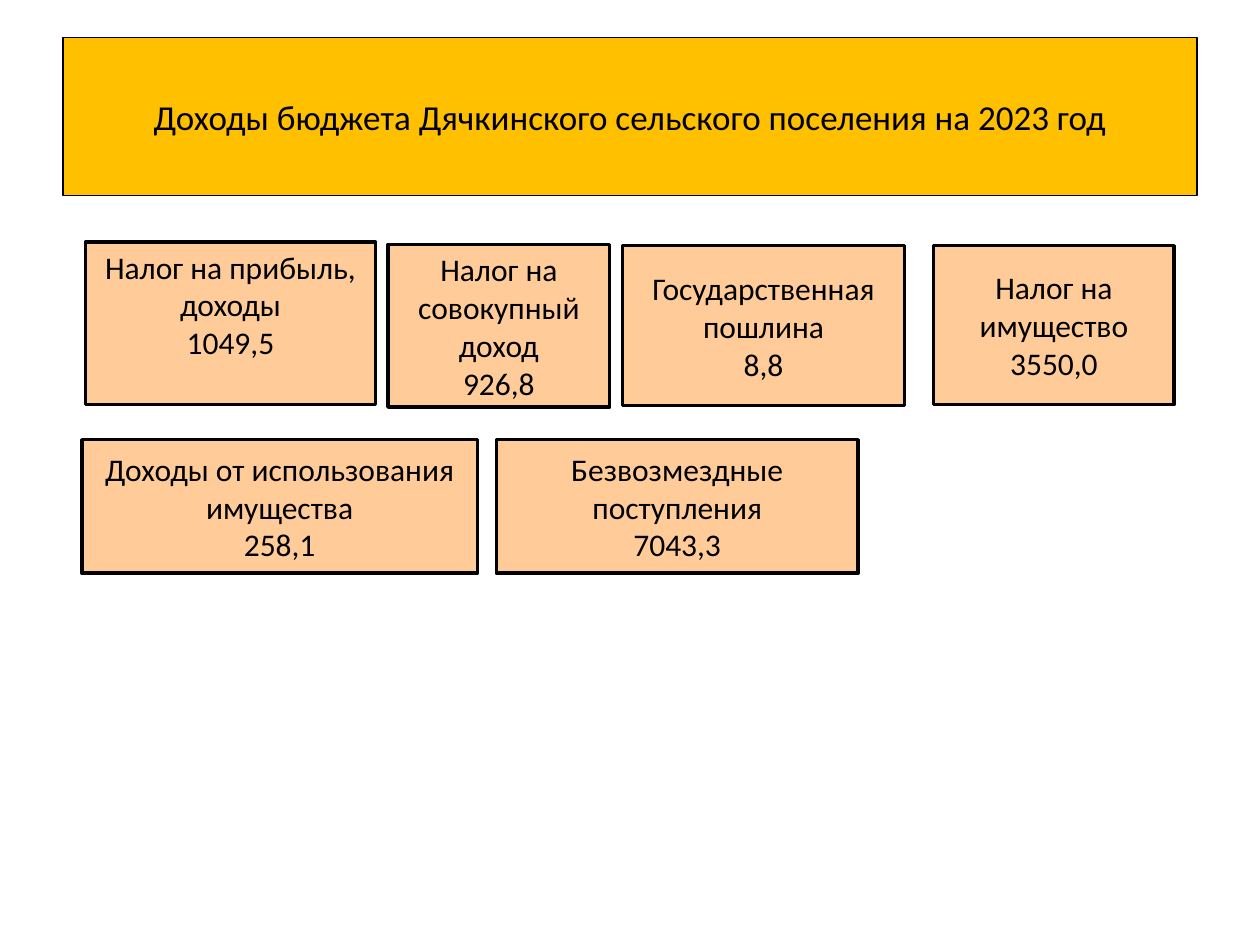
"""Build a one-slide overview of a rural settlement's budget income for 2023."""
from pptx import Presentation
from pptx.dml.color import RGBColor
from pptx.enum.shapes import MSO_SHAPE
from pptx.enum.text import MSO_ANCHOR, MSO_AUTO_SIZE, PP_ALIGN
from pptx.util import Inches, Pt

RECT = MSO_SHAPE.RECTANGLE
MIDDLE = MSO_ANCHOR.MIDDLE
CENTER = PP_ALIGN.CENTER
FIXED = MSO_AUTO_SIZE.NONE

THEME = {
    "font": "Calibri", "ink": "000000", "gold": "FFC000", "peach": "FFCC99",
    "head": 20, "body": 18, "thin": 0.75, "thick": 2,
}
WIDE, HIGH = 10, 7.5
COLS, ROWS = 100, 75

TITLE = "Доходы бюджета Дячкинского сельского поселения на 2023 год"
HEAD = (5, 3, 90, 12.5)
TAXES = [
    ("Налог на прибыль, доходы", "1049,5", (6.8, 19.2, 23, 12.9), 0.35),
    ("Налог на совокупный доход", "926,8", (30.8, 19.4, 17.6, 12.9), 0.05),
    ("Государственная пошлина", "8,8", (49.4, 19.5, 22.4, 12.7), 0.05),
    ("Налог на имущество", "3550,0", (74.1, 19.5, 19.1, 12.6), 0.05),
]
OTHER = [
    ("Доходы от использования имущества", "258,1", (6.5, 34.9, 31.4, 10.6), 0.05),
    ("Безвозмездные поступления", "7043,3", (39.4, 34.9, 28.7, 10.6), 0.05),
]


def place(cell):
    left, top, width, height = cell
    return [Inches(n) for n in (left * WIDE / COLS, top * HIGH / ROWS,
                                width * WIDE / COLS, height * HIGH / ROWS)]


def paint(shape, fill, width):
    shape.fill.solid()
    shape.fill.fore_color.rgb = RGBColor.from_string(THEME[fill])
    shape.line.color.rgb = RGBColor.from_string(THEME["ink"])
    shape.line.width = Pt(THEME[width])


def write(shape, *lines, size="body", foot=0.05):
    frame = shape.text_frame
    frame.text = "\n".join(lines)
    frame.word_wrap = True
    frame.auto_size = FIXED
    frame.vertical_anchor = MIDDLE
    frame.margin_bottom = Inches(foot)
    for para in frame.paragraphs:
        para.alignment = CENTER
        font = para.runs[0].font
        font.name = THEME["font"]
        font.size = Pt(THEME[size])
        font.color.rgb = RGBColor.from_string(THEME["ink"])


def main():
    deck = Presentation()
    deck.slide_width, deck.slide_height = Inches(WIDE), Inches(HIGH)
    slide = deck.slides.add_slide(deck.slide_layouts[5])

    title = slide.shapes.title
    title.left, title.top, title.width, title.height = place(HEAD)
    paint(title, "gold", "thin")
    write(title, TITLE, size="head")

    for name, total, cell, foot in TAXES + OTHER:
        box = slide.shapes.add_shape(RECT, *place(cell))
        box.shadow.inherit = False
        paint(box, "peach", "thick")
        write(box, name, total, foot=foot)

    deck.save("out.pptx")


if __name__ == "__main__":
    main()
